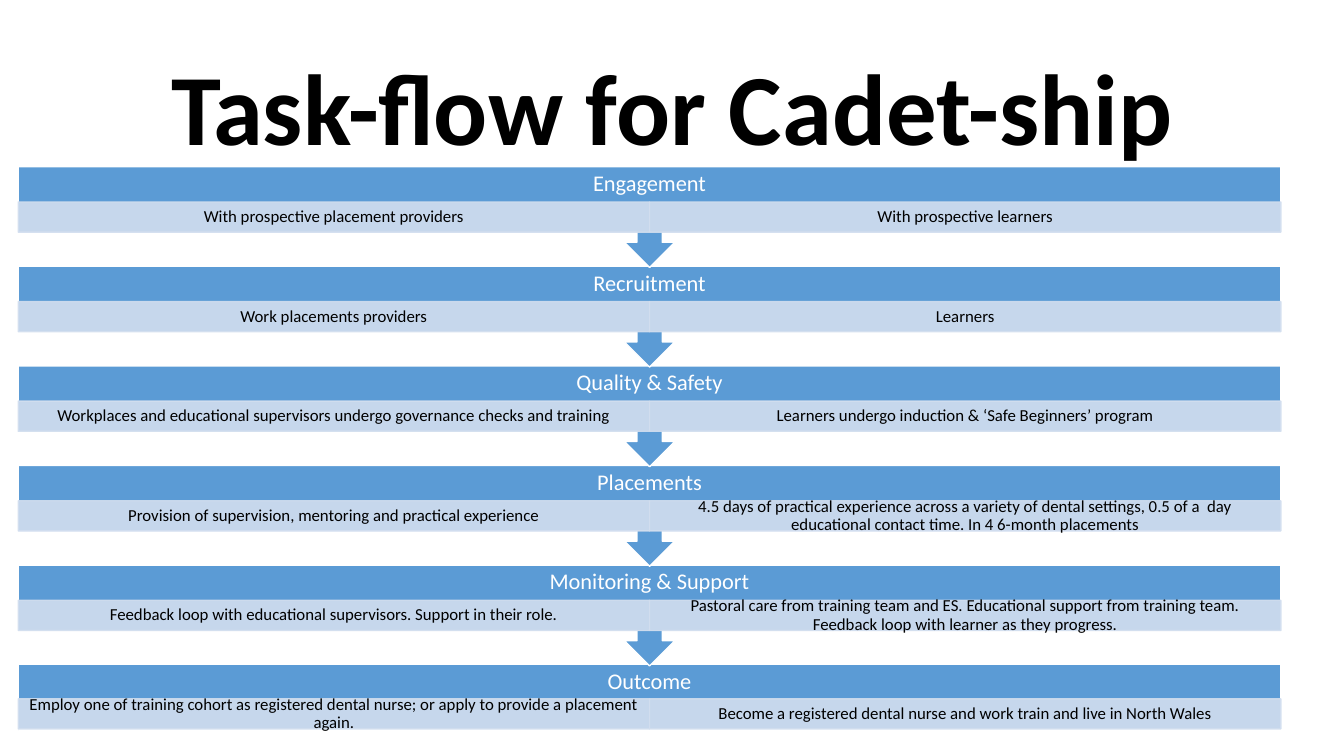
from pptx import Presentation, util as u
from pptx.dml.color import RGBColor
from pptx.enum import shapes, text
from pptx.oxml.ns import qn
from lxml import etree

BLUE, PALE, WHITE, BLACK = "5B9BD5", "D2DEEF", "FFFFFF", "000000"
LEFT, TOP, WIDTH, PITCH = 0.46, 4.2, 31.82, 2.51
HALF = WIDTH / 2
CELL_HEIGHT = 0.76

stages = [
    ("Engagement",
     "With prospective placement providers",
     "With prospective learners"),
    ("Recruitment",
     "Work placements providers",
     "Learners"),
    ("Quality & Safety",
     "Workplaces and educational supervisors undergo governance checks and training",
     "Learners undergo induction & ‘Safe Beginners’ program"),
    ("Placements",
     "Provision of supervision, mentoring and practical experience",
     "4.5 days of practical experience across a variety of dental settings, "
     "0.5 of a  day educational contact time. In 4 6-month placements"),
    ("Monitoring & Support",
     "Feedback loop with educational supervisors. Support in their role.",
     "Pastoral care from training team and ES. Educational support from training team. "
     "Feedback loop with learner as they progress."),
    ("Outcome",
     "Employ one of training cohort as registered dental nurse; "
     "or apply to provide a placement again.",
     "Become a registered dental nurse and work train and live in North Wales"),
]


def paint(shape, fill, line, opacity=100):
    """Set a flat fill and a 1 pt outline, both with the given opacity in percent."""
    shape.shadow.inherit = False
    shape.fill.solid()
    shape.fill.fore_color.rgb = RGBColor.from_string(fill)
    shape.line.color.rgb = RGBColor.from_string(line)
    shape.line.width = u.Pt(1)
    if opacity < 100:
        for color in shape.fill._xPr.iter(qn("a:srgbClr")):
            etree.SubElement(color, qn("a:alpha"), val=str(opacity * 1000))


def write(shape, words, size, color, side=0.23, edge=0.05, bold=False):
    """Put one centred line of text in a shape; side and edge are insets in cm."""
    frame = shape.text_frame
    frame.word_wrap = True
    frame.auto_size = text.MSO_AUTO_SIZE.NONE
    frame.vertical_anchor = text.MSO_ANCHOR.MIDDLE
    frame.margin_left = frame.margin_right = u.Cm(side)
    frame.margin_top = frame.margin_bottom = u.Cm(edge)
    paragraph = frame.paragraphs[0]
    paragraph.alignment = text.PP_ALIGN.CENTER
    paragraph.line_spacing = 0.9
    run = paragraph.add_run()
    run.text = words
    run.font.name = "Calibri"
    run.font.size = u.Pt(size)
    run.font.bold = bold
    run.font.color.rgb = RGBColor.from_string(color)


deck = Presentation()
deck.slide_width, deck.slide_height = u.Cm(33.87), u.Cm(19.05)
slide = deck.slides.add_slide(deck.slide_layouts[5])

title = slide.shapes.title
title.left, title.top, title.width, title.height = u.Cm(2.33), u.Cm(1.01), u.Cm(29.21), u.Cm(3.68)
write(title, "Task-flow for Cadet-ship", 72, BLACK, 0.25, 0.13, bold=True)

# Built from the last stage up, so each arrow tip lies over the stage below
for index, (stage, *tasks) in reversed(list(enumerate(stages))):
    top = TOP + PITCH * index
    if index == len(stages) - 1:
        kind, height, heading_height = shapes.MSO_SHAPE.RECTANGLE, 1.65, 0.86
    else:
        kind, height, heading_height = shapes.MSO_SHAPE.UP_ARROW_CALLOUT, 2.54, 0.89

    band = slide.shapes.add_shape(kind, u.Cm(LEFT), u.Cm(top), u.Cm(WIDTH), u.Cm(height))
    paint(band, BLUE, WHITE)
    if kind == shapes.MSO_SHAPE.UP_ARROW_CALLOUT:
        band.rotation = 180

    heading = slide.shapes.add_textbox(
        u.Cm(LEFT), u.Cm(top), u.Cm(WIDTH), u.Cm(heading_height))
    write(heading, stage, 16, WHITE, 0.3, 0.3)

    for column, task in enumerate(tasks):
        cell = slide.shapes.add_shape(
            shapes.MSO_SHAPE.RECTANGLE, u.Cm(LEFT + HALF * column),
            u.Cm(top + heading_height), u.Cm(HALF), u.Cm(CELL_HEIGHT))
        paint(cell, PALE, PALE, opacity=90)
        write(cell, task, 12, BLACK)

deck.save("out.pptx")
